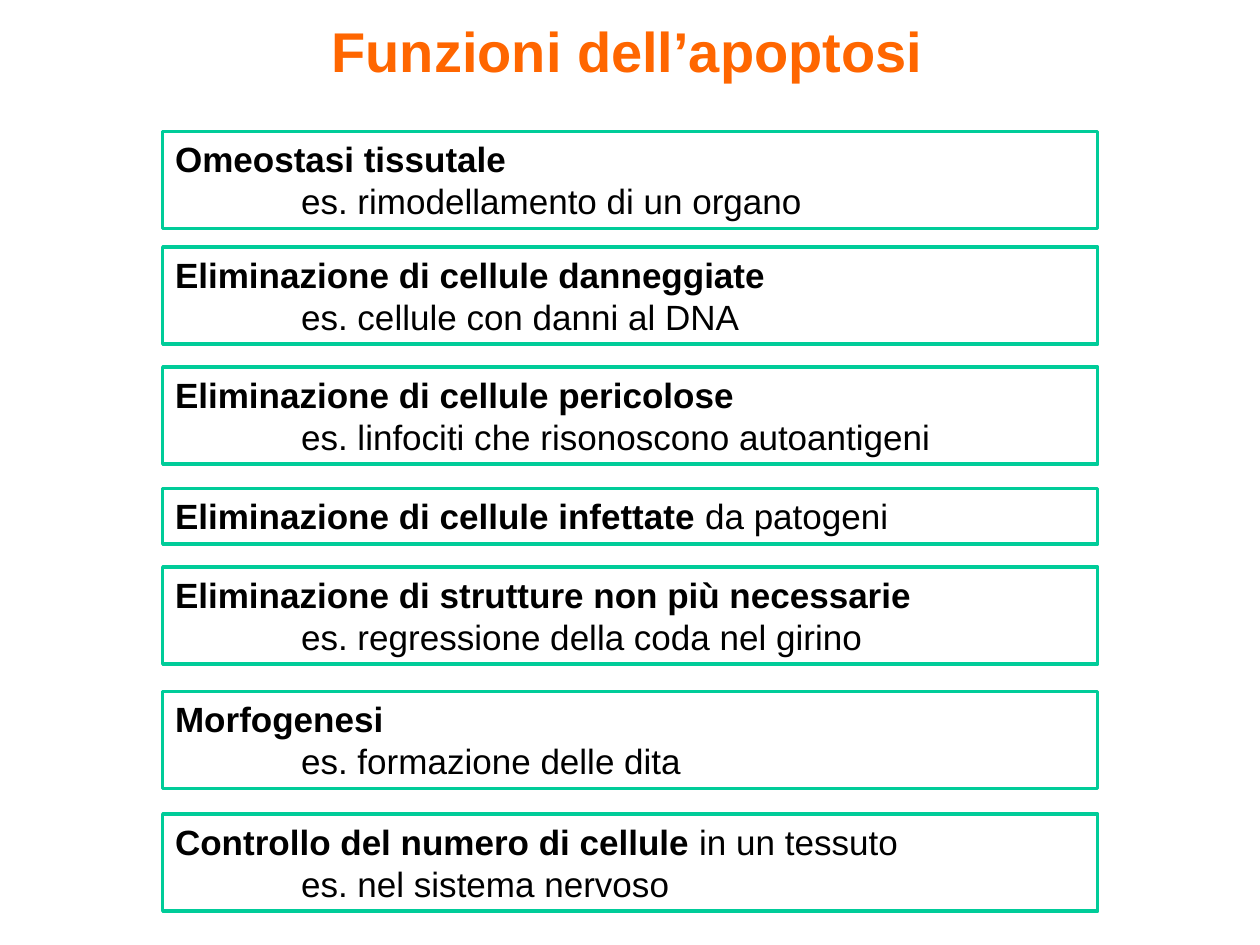
import lxml.etree
import pptx
import pptx.dml.color
import pptx.enum.shapes
import pptx.enum.text
import pptx.oxml.ns
import pptx.util

Cm = pptx.util.Cm
COLORS = {"title": "FF6600", "text": "000000", "fill": "FFFFFF", "border": "00CC99"}
FUNCTIONS = [
    (2.65, "Omeostasi tissutale", "", "es. rimodellamento di un organo"),
    (4.98, "Eliminazione di cellule danneggiate", "", "es. cellule con danni al DNA"),
    (7.4, "Eliminazione di cellule pericolose", "", "es. linfociti che risonoscono autoantigeni"),
    (9.85, "Eliminazione di cellule infettate ", "da patogeni", ""),
    (11.43, "Eliminazione di strutture non più necessarie", "", "es. regressione della coda nel girino"),
    (13.94, "Morfogenesi", "", "es. formazione delle dita"),
    (16.41, "Controllo del numero di cellule ", "in un tessuto", "es. nel sistema nervoso"),
]


class SlideBuilder:
    font = "Arial"
    title_size = 32
    body_size = 20
    tab_stop = Cm(2.54)

    def __init__(self, slide):
        self.slide = slide

    def color(self, name):
        return pptx.dml.color.RGBColor.from_string(COLORS[name])

    def format_run(self, r, size, color, bold):
        r.font.name = self.font
        r.font.size = pptx.util.Pt(size)
        r.font.bold = bold
        r.font.color.rgb = self.color(color)

    def add_tab_stop(self, p):
        qn = pptx.oxml.ns.qn
        tabs = lxml.etree.SubElement(p._p.get_or_add_pPr(), qn("a:tabLst"))
        lxml.etree.SubElement(tabs, qn("a:tab"), pos=str(int(self.tab_stop)), algn="l")

    def title(self, text, left, top, width, height):
        s = self.slide.shapes.add_textbox(Cm(left), Cm(top), Cm(width), Cm(height))
        tf = s.text_frame
        tf.word_wrap = False
        tf.auto_size = pptx.enum.text.MSO_AUTO_SIZE.SHAPE_TO_FIT_TEXT
        tf.text = text
        p = tf.paragraphs[0]
        p.alignment = pptx.enum.text.PP_ALIGN.CENTER
        self.format_run(p.runs[0], self.title_size, "title", True)

    def function_box(self, top, name, detail, example):
        height = 1.96 if example else 1.12
        s = self.slide.shapes.add_shape(
            pptx.enum.shapes.MSO_SHAPE.RECTANGLE, Cm(3.28), Cm(top), Cm(18.85), Cm(height))
        s.shadow.inherit = False
        s.fill.solid()
        s.fill.fore_color.rgb = self.color("fill")
        s.line.color.rgb = self.color("border")
        s.line.width = pptx.util.Pt(2)
        tf = s.text_frame
        tf.word_wrap = True
        tf.auto_size = pptx.enum.text.MSO_AUTO_SIZE.SHAPE_TO_FIT_TEXT
        tf.vertical_anchor = pptx.enum.text.MSO_ANCHOR.TOP
        tf.text = name
        p = tf.paragraphs[0]
        self.format_run(p.runs[0], self.body_size, "text", True)
        if detail:
            r = p.add_run()
            r.text = detail
            self.format_run(r, self.body_size, "text", False)
        if example:
            p = tf.add_paragraph()
            p.text = "\t" + example
            self.add_tab_stop(p)
            self.format_run(p.runs[0], self.body_size, "text", False)
        for p in tf.paragraphs:
            p.alignment = pptx.enum.text.PP_ALIGN.LEFT


def main():
    prs = pptx.Presentation()
    prs.slide_width = Cm(25.4)
    prs.slide_height = Cm(19.05)
    builder = SlideBuilder(prs.slides.add_slide(prs.slide_layouts[6]))
    builder.title("Funzioni dell’apoptosi", 6.39, 0.2, 12.52, 1.63)
    for function in FUNCTIONS:
        builder.function_box(*function)
    prs.save("out.pptx")


if __name__ == "__main__":
    main()
